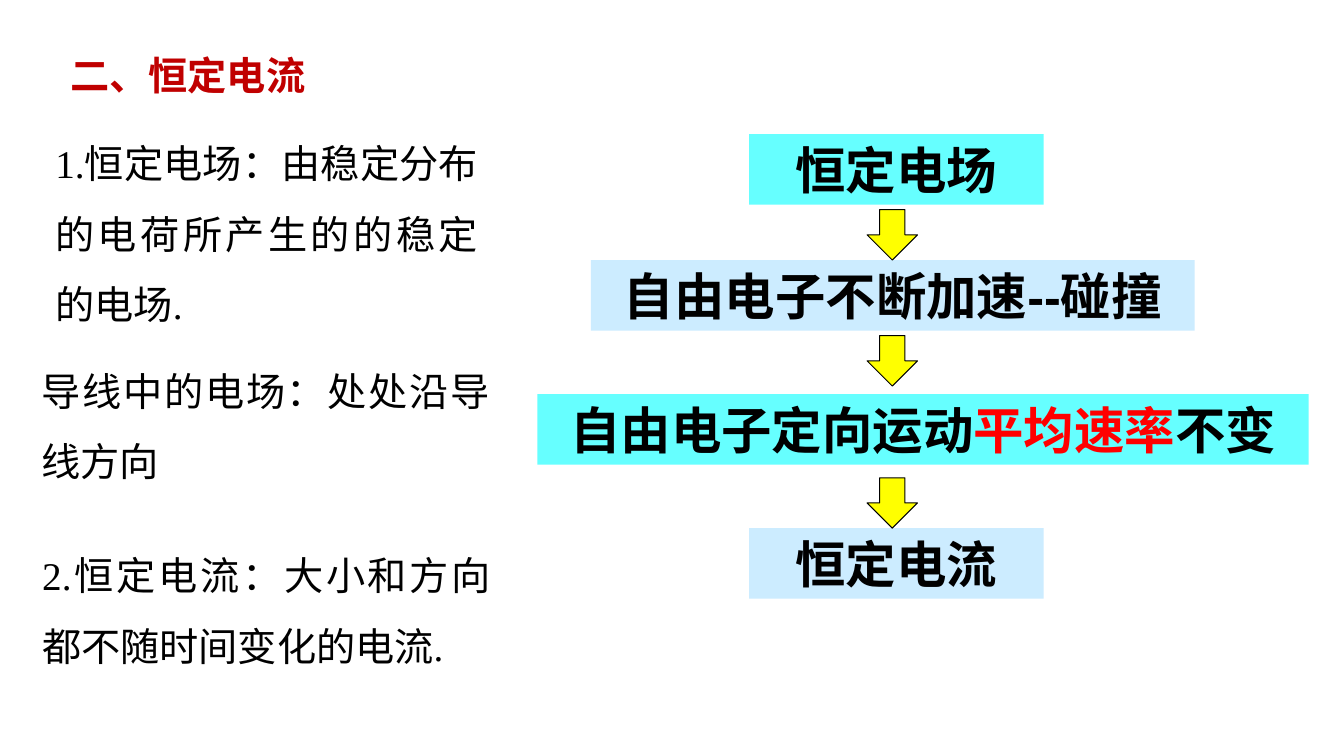
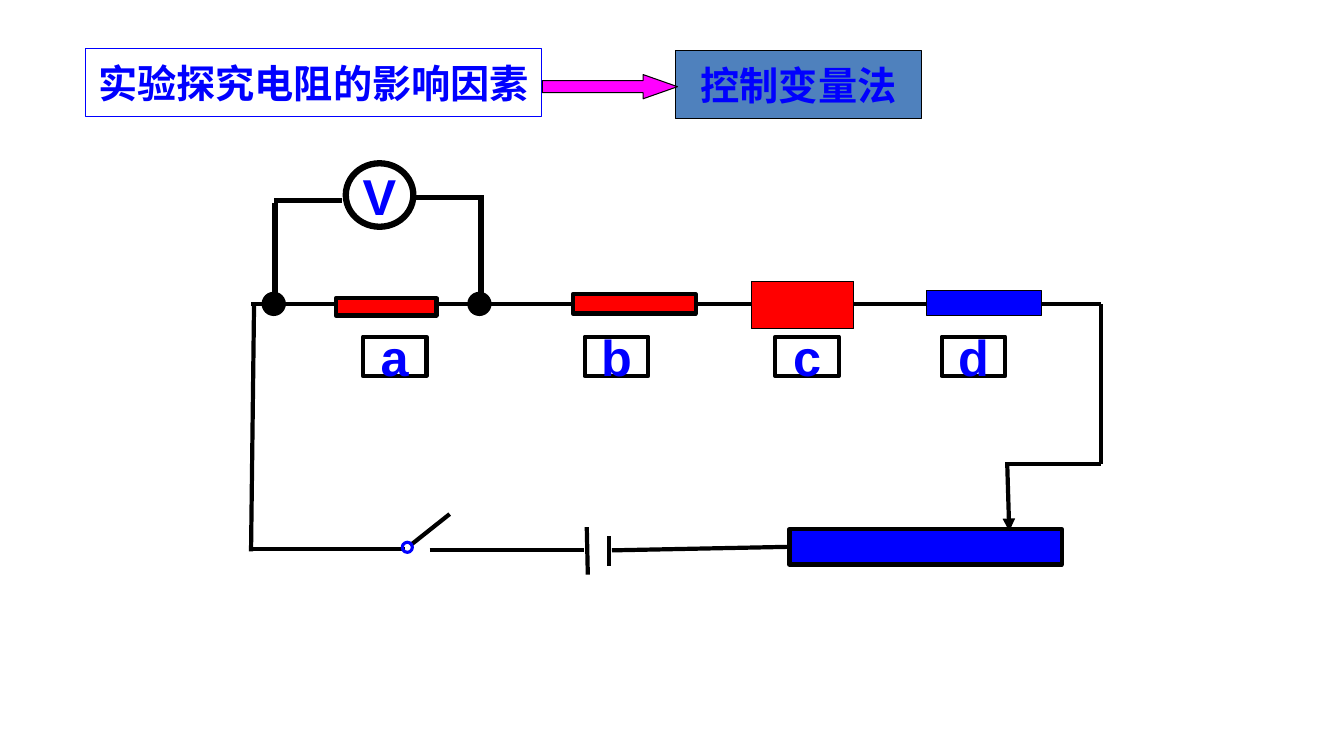
"""Build two physics slides: the steady current and the resistance experiment."""
from dataclasses import dataclass

from lxml import etree
from pptx import Presentation
from pptx.dml.color import RGBColor
from pptx.enum.shapes import MSO_CONNECTOR, MSO_SHAPE
from pptx.enum.text import MSO_ANCHOR, PP_ALIGN
from pptx.oxml.ns import qn
from pptx.util import Inches, Pt

RECTANGLE, ELLIPSE = MSO_SHAPE.RECTANGLE, MSO_SHAPE.OVAL
DOWN_ARROW, RIGHT_ARROW = MSO_SHAPE.DOWN_ARROW, MSO_SHAPE.RIGHT_ARROW
STRAIGHT = MSO_CONNECTOR.STRAIGHT
CENTER, JUSTIFY = PP_ALIGN.CENTER, PP_ALIGN.JUSTIFY
TOP, MIDDLE = MSO_ANCHOR.TOP, MSO_ANCHOR.MIDDLE
LEFT_SIDE = 1


@dataclass(frozen=True)
class Theme:
    black: str = "000000"
    blue: str = "0000FF"
    red: str = "FF0000"
    title: str = "C00000"
    cyan: str = "66FFFF"
    pale: str = "CCECFF"
    steel: str = "4F81BD"
    yellow: str = "FFFF00"
    magenta: str = "FF00FF"
    sans: str = "Arial"
    serif: str = "Times New Roman"
    chinese: str = "Noto Sans CJK SC"
    large: int = 36
    body: int = 28
    thin: float = 0.75
    ring: float = 2.25
    wire: float = 3
    heavy: float = 4.5


THEME = Theme()

HEADING = ("二、恒定电流", (0.6, 0.23, 2.56, 0.81))
NOTES = [
    ("1.恒定电场：由稳定分布的电荷所产生的的稳定的电场.", (0.45, 1.1, 4.39, 2.22)),
    ("导线中的电场：处处沿导线方向", (0.31, 3.36, 4.65, 1.51)),
    ("2.恒定电流：大小和方向都不随时间变化的电流.", (0.32, 5.19, 4.65, 1.51)),
]
STEP_HEIGHT = 0.7
STEPS = [
    ([("恒定电场", THEME.black)], 7.43, 1.33, 2.92),
    ([("自由电子不断加速--碰撞", THEME.black)], 5.86, 2.58, 5.99),
    ([("自由电子定向运动", THEME.black), ("平均速率", THEME.red), ("不变", THEME.black)],
     5.33, 3.91, 7.65),
    ([("恒定电流", THEME.black)], 7.43, 5.24, 2.92),
]
STEP_FILLS = (THEME.cyan, THEME.pale)
STEP_ARROW_LEFT, STEP_ARROW_SIZE = 8.6, 0.5
STEP_ARROW_TOPS = (2.08, 3.33, 4.74)

HEADERS = [
    ("实验探究电阻的影响因素", (0.85, 0.48, 4.52, 0.68), None, THEME.blue),
    ("控制变量法", (6.7, 0.5, 2.44, 0.68), THEME.steel, THEME.black),
]
HEADER_ARROW = (5.38, 0.74, 1.34, 0.24)

MAIN_WIRE = (2.49, 3.02, 10.92, 3.02)
RESISTORS = [
    ((3.33, 2.96, 1, 0.17), THEME.red, THEME.wire),
    ((5.68, 2.92, 1.22, 0.19), THEME.red, THEME.wire),
    ((7.45, 2.79, 1.02, 0.47), THEME.red, THEME.thin),
    ((9.19, 2.88, 1.14, 0.25), THEME.blue, THEME.thin),
]
LABELS = [("a", 3.6), ("b", 5.8), ("c", 7.69), ("d", 9.34)]
LABEL_TOP, LABEL_WIDTH, LABEL_HEIGHT = 3.34, 0.63, 0.39
RHEOSTAT = (7.83, 5.25, 2.7, 0.35)
SLIDER = (9.99, 4.6, 10.01, 5.27)
RHEOSTAT_LEAD = (6.07, 5.46, 7.83, 5.43)
LOOP_WIRES = [
    (2.52, 3.02, 2.49, 5.47),
    (10.92, 3.02, 10.92, 4.6),
    (9.97, 4.6, 10.92, 4.6),
    (2.49, 5.45, 4.02, 5.45),
    (4.26, 5.46, 5.79, 5.46),
]
SWITCH_BLADE = (4.07, 5.41, 4.46, 5.1)
SWITCH_PIVOT = (3.99, 5.38, 0.1, 0.1)
BATTERY_PLATES = [(5.82, 5.23, 5.83, 5.7), (6.04, 5.32, 6.04, 5.62)]

VOLTMETER = (3.43, 1.62, 0.67, 0.63)
METER_LEADS = [(2.72, 1.99, 3.39, 1.99), (4.13, 1.96, 4.8, 1.96)]
METER_DROPS = [(2.73, 2.01, 2.73, 3.03), (4.77, 1.98, 4.77, 3)]
JUNCTION_LEFTS, JUNCTION_TOP, JUNCTION_SIZE = (2.61, 4.65), 2.91, 0.21


def color(value):
    return RGBColor.from_string(value)


def write(shape, spans, size, face, bold=False, align=CENTER, anchor=MIDDLE,
          wrap=False, spacing=1):
    """Write one paragraph of (text, colour) spans into a shape."""
    frame = shape.text_frame
    frame.word_wrap = wrap
    frame.vertical_anchor = anchor
    para = frame.paragraphs[0]
    para.alignment = align
    para.line_spacing = spacing
    font = para.font
    font.size, font.bold, font.name = Pt(size), bold, face
    font.color.rgb = color(spans[0][1])
    defaults = para._p.find(".//" + qn("a:defRPr"))
    etree.SubElement(defaults, qn("a:ea"), typeface=THEME.chinese)
    for text, span_color in spans:
        span = para.add_run()
        span.text = text
        if span_color != spans[0][1]:
            span.font.color.rgb = color(span_color)


def add_box(page, kind, place, fill=None, line=None, width=THEME.thin, adjustments=()):
    """Add a preset shape with a flat fill and outline."""
    box = page.shapes.add_shape(kind, *map(Inches, place))
    box.shadow.inherit = False
    if fill:
        box.fill.solid()
        box.fill.fore_color.rgb = color(fill)
    else:
        box.fill.background()
    if line:
        box.line.color.rgb = color(line)
        box.line.width = Pt(width)
    else:
        box.line.fill.background()
    for index, value in enumerate(adjustments):
        box.adjustments[index] = value
    return box


def add_wire(page, ends, width=THEME.wire, arrow=False):
    """Add a straight black wire between two points."""
    wire = page.shapes.add_connector(STRAIGHT, *map(Inches, ends))
    wire.line.color.rgb = color(THEME.black)
    wire.line.width = Pt(width)
    properties = wire._element.spPr
    if arrow:
        etree.SubElement(properties.find(qn("a:ln")), qn("a:tailEnd"), type="triangle")
    etree.SubElement(properties, qn("a:effectLst"))
    return wire


def add_note(page, text, place, text_color=THEME.black, bold=False, wrap=True):
    """Add a justified text box."""
    box = page.shapes.add_textbox(*map(Inches, place))
    write(box, [(text, text_color)], THEME.body, THEME.serif, bold, JUSTIFY, TOP, wrap, 1.5)


def build_current(page):
    """Show the definitions beside the chain of causes."""
    for index, (spans, left, top, width) in enumerate(STEPS):
        box = add_box(page, RECTANGLE, (left, top, width, STEP_HEIGHT),
                      STEP_FILLS[index % len(STEP_FILLS)])
        write(box, spans, THEME.large, THEME.sans, bold=True)
    for top in STEP_ARROW_TOPS:
        add_box(page, DOWN_ARROW, (STEP_ARROW_LEFT, top, STEP_ARROW_SIZE, STEP_ARROW_SIZE),
                THEME.yellow, THEME.black)
    add_note(page, *HEADING, THEME.title, bold=True, wrap=False)
    for text, place in NOTES:
        add_note(page, text, place)


def build_experiment(page):
    """Show the circuit that compares four resistors."""
    for text, place, fill, line in HEADERS:
        box = add_box(page, RECTANGLE, place, fill, line)
        write(box, [(text, THEME.blue)], THEME.body, THEME.sans, bold=True)
    add_box(page, RIGHT_ARROW, HEADER_ARROW, THEME.magenta, THEME.black,
            adjustments=(0.5, 1.42))

    for ends in [MAIN_WIRE, *LOOP_WIRES, SWITCH_BLADE, *BATTERY_PLATES]:
        add_wire(page, ends)
    for place, fill, width in RESISTORS:
        add_box(page, RECTANGLE, place, fill, THEME.black, width)
    for letter, left in LABELS:
        label = add_box(page, RECTANGLE, (left, LABEL_TOP, LABEL_WIDTH, LABEL_HEIGHT),
                        line=THEME.black, width=THEME.wire)
        write(label, [(letter, THEME.blue)], THEME.large, THEME.sans, bold=True)
    rheostat = add_box(page, RECTANGLE, RHEOSTAT, THEME.blue, THEME.black, THEME.wire)
    add_wire(page, RHEOSTAT_LEAD).end_connect(rheostat, LEFT_SIDE)
    add_wire(page, SLIDER, arrow=True)
    add_box(page, ELLIPSE, SWITCH_PIVOT, line=THEME.blue, width=THEME.ring)

    meter = add_box(page, ELLIPSE, VOLTMETER, line=THEME.black, width=THEME.heavy)
    write(meter, [("V", THEME.blue)], THEME.large, THEME.sans, bold=True)
    for ends in METER_LEADS:
        add_wire(page, ends)
    for ends in METER_DROPS:
        add_wire(page, ends, THEME.heavy)
    for left in JUNCTION_LEFTS:
        add_box(page, ELLIPSE, (left, JUNCTION_TOP, JUNCTION_SIZE, JUNCTION_SIZE),
                THEME.black, THEME.black, THEME.ring)


def main():
    deck = Presentation()
    deck.slide_width, deck.slide_height = Inches(13.33), Inches(7.5)
    for build in (build_current, build_experiment):
        build(deck.slides.add_slide(deck.slide_layouts[6]))
    deck.save("out.pptx")


if __name__ == "__main__":
    main()
